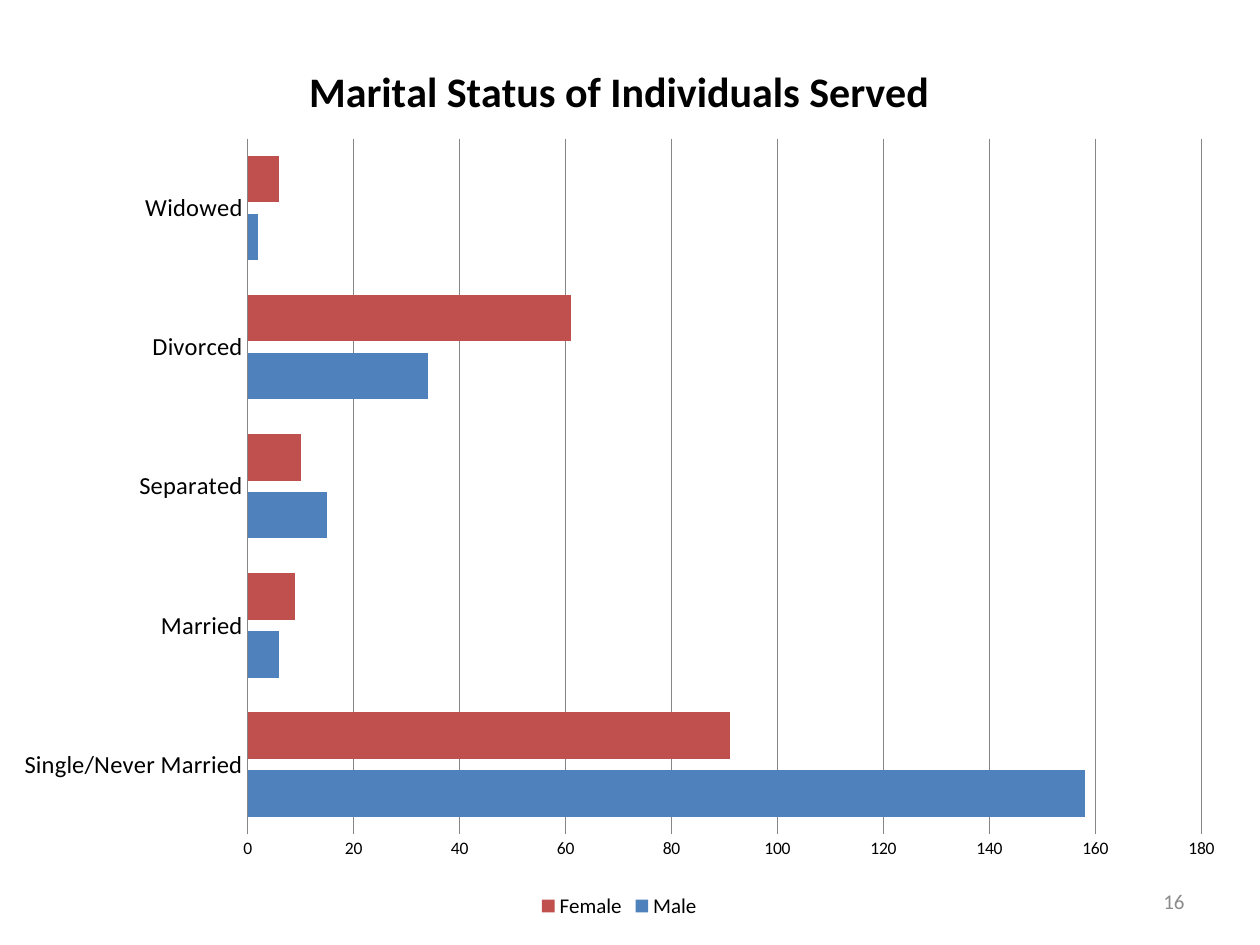
from dataclasses import dataclass

from lxml import etree
from pptx import Presentation
from pptx.chart.data import CategoryChartData
from pptx.dml.color import RGBColor
from pptx.enum import chart as ch, text as t
from pptx.oxml.ns import qn
from pptx.util import Inches, Pt


@dataclass
class Group:
    name: str
    counts: tuple[int, ...]
    color: str


STATUSES = ["Single/Never Married", "Married", "Separated", "Divorced", "Widowed"]
GROUPS = [
    Group("Male", (158, 6, 15, 34, 2), "4F81BD"),
    Group("Female", (91, 9, 10, 61, 6), "C0504D"),
]
GRAY = "868686"


def rgb(value: str) -> RGBColor:
    return RGBColor.from_string(value)


def style_font(font, size: float, color: str = "000000", bold: bool = False) -> None:
    values = {"name": "Calibri", "size": Pt(size), "bold": bold}
    for key, value in values.items():
        setattr(font, key, value)
    font.color.rgb = rgb(color)


def style_line(line, color: str = GRAY) -> None:
    line.color.rgb = rgb(color)
    line.width = Pt(0.75)


def place_plot(chart, **fractions: float) -> None:
    """Fix the inner plot area as fractions of the chart."""
    area = chart.element.find(".//" + qn("c:plotArea"))
    layout = area.find(qn("c:layout"))
    if layout is None:
        layout = etree.Element(qn("c:layout"))
        area.insert(0, layout)
    manual = etree.SubElement(layout, qn("c:manualLayout"))
    settings = {"layoutTarget": "inner", "xMode": "edge", "yMode": "edge", **fractions}
    for tag, value in settings.items():
        etree.SubElement(manual, qn(f"c:{tag}")).set("val", str(value))


def add_status_chart(slide) -> None:
    data = CategoryChartData(number_format="General")
    data.categories = STATUSES
    for group in GROUPS:
        data.add_series(group.name, group.counts)
    chart = slide.shapes.add_chart(
        ch.XL_CHART_TYPE.BAR_CLUSTERED,
        Inches(0), Inches(0.25), Inches(9.83), Inches(7.08), data,
    ).chart
    style_font(chart.font, 10)

    # Title and legend
    chart.has_title = True
    title = chart.chart_title
    title.include_in_layout = False
    title.text_frame.text = "Marital Status of Individuals Served"
    style_font(title.text_frame.paragraphs[0].runs[0].font, 24, bold=True)
    chart.has_legend = True
    chart.legend.position = ch.XL_LEGEND_POSITION.BOTTOM
    chart.legend.include_in_layout = False
    style_font(chart.legend.font, 12)

    # Bars
    plot = chart.plots[0]
    plot.gap_width, plot.overlap, plot.vary_by_categories = 75, -25, False
    for series, group in zip(plot.series, GROUPS):
        series.format.fill.solid()
        series.format.fill.fore_color.rgb = rgb(group.color)
        series.invert_if_negative = False

    # Axes
    status_axis, count_axis = chart.category_axis, chart.value_axis
    for axis, size in ((status_axis, 14), (count_axis, 10)):
        axis.major_tick_mark = axis.minor_tick_mark = ch.XL_TICK_MARK.NONE
        style_font(axis.tick_labels.font, size)
    style_line(status_axis.format.line)
    count_axis.format.line.fill.background()
    count_axis.minimum_scale, count_axis.maximum_scale = 0, 180
    count_axis.major_unit = 20
    count_axis.has_major_gridlines = True
    style_line(count_axis.major_gridlines.format.line)
    place_plot(chart, x=0.2, y=0.12, w=0.77, h=0.78)


def add_page_number(slide, number: str) -> None:
    box = slide.shapes.add_textbox(Inches(7.17), Inches(6.95), Inches(2.33), Inches(0.4))
    frame = box.text_frame
    frame.word_wrap = True
    frame.vertical_anchor = t.MSO_ANCHOR.MIDDLE
    paragraph = frame.paragraphs[0]
    paragraph.alignment = t.PP_ALIGN.RIGHT
    run = paragraph.add_run()
    run.text = number
    style_font(run.font, 12, "8C8C8C")


def main() -> None:
    deck = Presentation()
    deck.slide_width, deck.slide_height = Inches(10), Inches(7.5)
    slide = deck.slides.add_slide(deck.slide_layouts[6])
    add_status_chart(slide)
    add_page_number(slide, "16")
    deck.save("out.pptx")


if __name__ == "__main__":
    main()
